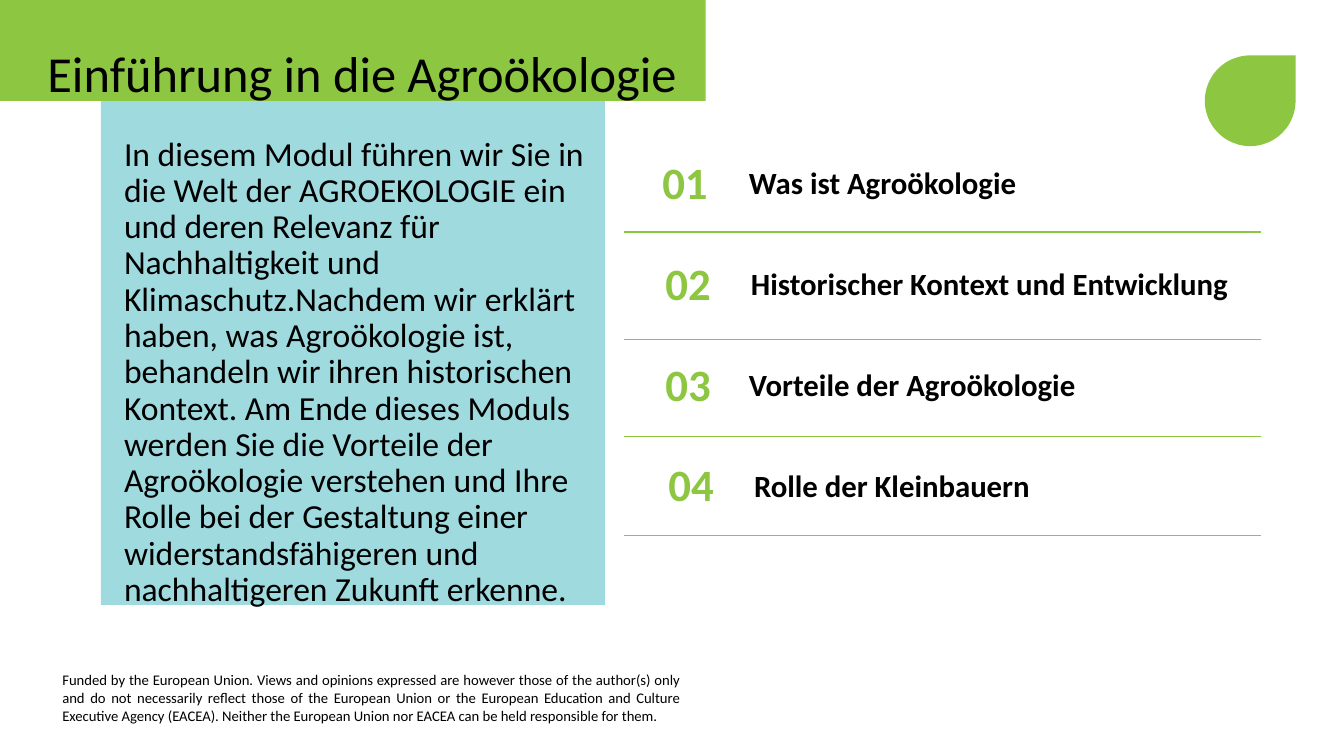
"""Build the module introduction slide on agroecology."""
from lxml import etree
from pptx import Presentation
from pptx.dml.color import RGBColor
from pptx.enum import shapes, text
from pptx.oxml.ns import qn
from pptx.util import Inches, Pt

GREEN, TEAL, BLACK = "8DC641", "9FDADF", "000000"
TITLE = "Einführung in die Agroökologie"
INTRO = (
    "In diesem Modul führen wir Sie in die Welt der AGROEKOLOGIE ein und deren "
    "Relevanz für Nachhaltigkeit und Klimaschutz.Nachdem wir erklärt haben, was "
    "Agroökologie ist, behandeln wir ihren historischen Kontext. Am Ende dieses "
    "Moduls werden Sie die Vorteile der Agroökologie verstehen und Ihre Rolle bei "
    "der Gestaltung einer widerstandsfähigeren und nachhaltigeren Zukunft erkenne."
)
FUNDING = (
    "Funded by the European Union. Views and opinions expressed are however those "
    "of the author(s) only and do not necessarily reflect those of the European "
    "Union or the European Education and Culture Executive Agency (EACEA). Neither "
    "the European Union nor EACEA can be held responsible for them."
)
# Topic, number left, topic left, topic width, rule height
TOPICS = [
    ("Was ist Agroökologie", 6.41, 7.33, 4.88, 2.3),
    ("Historischer Kontext und Entwicklung", 6.44, 7.35, 5.37, 3.37),
    ("Vorteile der Agroökologie", 6.44, 7.33, 4.88, 4.33),
    ("Rolle der Kleinbauern", 6.47, 7.38, 4.88, 5.31),
]
# Pairs are corners; groups of six are cubic curves
PANEL = [
    (6.04, 6.22), (1.93, 6.22), (1.15, 6.22, 0.52, 5.53, 0.52, 4.68),
    (0.52, 0.82), (5.08, 0.82), (5.61, 0.82, 6.04, 1.29, 6.04, 1.86),
]
BANNER = [
    (-0.02, 0.29), (6.51, 0.29), (6.89, 0.29, 7.2, 0.53, 7.2, 0.81),
    (7.2, 1.25), (0.01, 1.25), (0.01, 0.48), (0.01, 0.44, 0, 0.41, 0, 0.37),
]


def color(value):
    return RGBColor.from_string(value)


def paint(sp, fill):
    sp.fill.solid()
    sp.fill.fore_color.rgb = color(fill)
    sp.line.fill.background()
    sp.shadow.inherit = False


def flatten(path, steps=24):
    points = []
    for part in path:
        if len(part) == 2:
            points.append(part)
            continue
        (x0, y0), (x1, y1, x2, y2, x3, y3) = points[-1], part
        for i in range(1, steps + 1):
            t = i / steps
            a, b, c, d = (1 - t) ** 3, 3 * t * (1 - t) ** 2, 3 * t * t * (1 - t), t ** 3
            points.append((a * x0 + b * x1 + c * x2 + d * x3,
                           a * y0 + b * y1 + c * y2 + d * y3))
    return points


def add_outline(s, path, fill):
    start, *rest = flatten(path)
    builder = s.shapes.build_freeform(*start, scale=Inches(1))
    builder.add_line_segments(rest, close=True)
    paint(builder.convert_to_shape(), fill)


def write(sp, box, words, size, fill=BLACK, bold=False, align="LEFT",
          anchor="MIDDLE", spacing=0.9):
    sp.left, sp.top, sp.width, sp.height = map(Inches, box)
    tf = sp.text_frame
    tf.text = words
    tf.word_wrap = True
    tf.auto_size = text.MSO_AUTO_SIZE.NONE
    tf.vertical_anchor = getattr(text.MSO_ANCHOR, anchor)
    p = tf.paragraphs[0]
    p.alignment = getattr(text.PP_ALIGN, align)
    p.line_spacing = spacing
    p.space_before = Pt(0)
    font = p.runs[0].font
    font.name, font.size, font.bold = "Calibri", Pt(size), bold
    font.color.rgb = color(fill)
    return p


def add_text(s, box, *args, **options):
    write(s.shapes.add_textbox(*map(Inches, box)), box, *args, **options)


def add_rule(s, y):
    rule = s.shapes.add_connector(shapes.MSO_CONNECTOR.STRAIGHT, Inches(6.19),
                                  Inches(y), Inches(12.51), Inches(y))
    rule.line.color.rgb = color(GREEN)
    rule.line.width = Pt(1)
    etree.SubElement(rule.element.spPr, qn("a:effectLst"))


def main():
    prs = Presentation()
    prs.slide_width, prs.slide_height = Inches(13.33), Inches(7.5)
    s = prs.slides.add_slide(prs.slide_layouts[1])
    title, body = s.placeholders

    add_outline(s, PANEL, TEAL)
    add_outline(s, BANNER, GREEN)
    add_text(s, (0.52, 6.61, 6.33, 0.66), FUNDING, 10.5, align="JUSTIFY",
             anchor="TOP", spacing=1.0)

    for i, (topic, number_left, left, width, rule_y) in enumerate(TOPICS):
        top = 1.46 + i
        add_rule(s, rule_y)
        add_text(s, (number_left, top, 0.77, 0.75), f"{i + 1:02}", 32, GREEN,
                 bold=True, align="CENTER")
        add_text(s, (left, top, width, 0.75), topic, 22, bold=True)

    leaf = s.shapes.add_shape(shapes.MSO_SHAPE.TEAR, Inches(11.95), Inches(0.55),
                              Inches(0.9), Inches(0.9))
    paint(leaf, GREEN)

    for sp in (body, title):
        s.shapes.element.append(sp.element)
    p = write(body, (1.13, 1.31, 5.02, 4.36), INTRO, 24, anchor="TOP")
    pPr = p._p.get_or_add_pPr()
    pPr.set("marL", "0")
    pPr.set("indent", "0")
    etree.SubElement(pPr, qn("a:buNone"))
    p = write(title, (0.12, 0.36, 7.09, 0.79), TITLE, 36)
    pPr = p._p.get_or_add_pPr()
    pPr.set("marL", str(Inches(0.5)))
    pPr.set("indent", str(Inches(-0.25)))

    prs.save("out.pptx")


if __name__ == "__main__":
    main()
